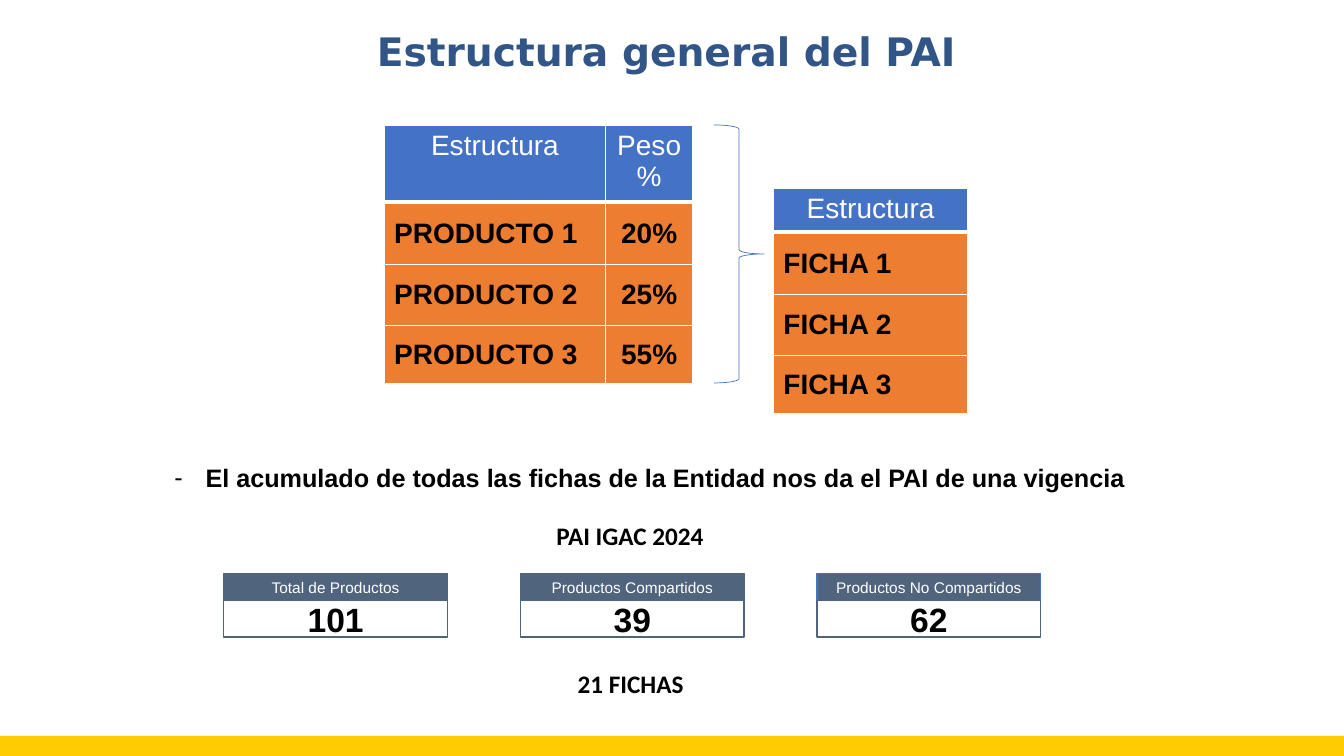
from lxml import etree
from pptx import Presentation
from pptx.dml.color import RGBColor
from pptx.enum.shapes import MSO_SHAPE
from pptx.enum.text import MSO_ANCHOR, PP_ALIGN
from pptx.oxml.ns import qn
from pptx.util import Inches, Pt

RECTANGLE, BRACE = MSO_SHAPE.RECTANGLE, MSO_SHAPE.RIGHT_BRACE
LEFT, CENTER = PP_ALIGN.LEFT, PP_ALIGN.CENTER
TOP, MIDDLE = MSO_ANCHOR.TOP, MSO_ANCHOR.MIDDLE
COLORS = {
    "yellow": "FFCC01", "title": "315587", "blue": "4472C4", "orange": "ED7D31",
    "slate": "51647E", "white": "FFFFFF", "black": "000000",
}
RGB = {name: RGBColor.from_string(value) for name, value in COLORS.items()}

presentation = Presentation()
presentation.slide_width, presentation.slide_height = Inches(13.33), Inches(7.5)
slide = presentation.slides.add_slide(presentation.slide_layouts[6])
shapes = slide.shapes


def share(left, top, width, height):
    across, down = presentation.slide_width / 100, presentation.slide_height / 100
    return int(left * across), int(top * down), int(width * across), int(height * down)


def write_text(frame, text, size, color="black", font="Arial", bold=True, align=LEFT):
    paragraph = frame.paragraphs[0]
    paragraph.alignment = align
    run = paragraph.add_run()
    run.text = text
    run.font.size, run.font.name, run.font.bold = Pt(size), font, bold
    run.font.color.rgb = RGB[color]


bar = shapes.add_shape(RECTANGLE, *share(0, 97.33, 100, 2.67))
bar.shadow.inherit = False
bar.fill.solid()
bar.fill.fore_color.rgb = RGB["yellow"]
bar.line.fill.background()

for text, box, size, color, font in [
    ("Estructura general del PAI", (27.31, 2.93, 45.46, 7.6), 28, "title", "DejaVu Sans"),
    ("PAI IGAC 2024", (40.66, 68.13, 12.6, 5.33), 18, "black", "Calibri"),
    ("21 FICHAS", (42.24, 87.73, 9.45, 5.33), 18, "black", "Calibri"),
]:
    label = shapes.add_textbox(*share(*box))
    label.text_frame.word_wrap = False
    write_text(label.text_frame, text, size, color, font)

summary = shapes.add_textbox(*share(12.23, 60.53, 78.54, 9.47))
summary.text_frame.word_wrap = True
properties = summary.text_frame.paragraphs[0]._p.get_or_add_pPr()
properties.set("marL", str(Inches(0.31)))
properties.set("indent", str(-Inches(0.31)))
etree.SubElement(properties, qn("a:buFont"), typeface="Arial")
etree.SubElement(properties, qn("a:buChar"), char="-")
write_text(summary.text_frame,
           "El acumulado de todas las fichas de la Entidad nos da el PAI de una vigencia", 18)

ROW_SHARES = [5.6, 8.27, 8, 7.73]
products = [("Estructura", "Peso %"), ("PRODUCTO 1", "20%"),
            ("PRODUCTO 2", "25%"), ("PRODUCTO 3", "55%")]
sheets = [("Estructura",), ("FICHA 1",), ("FICHA 2",), ("FICHA 3",)]
for rows, left, top, column_shares in [
    (products, 28.58, 16.53, [16.5, 6.45]),
    (sheets, 57.54, 24.93, [14.48]),
]:
    box = share(left, top, sum(column_shares), sum(ROW_SHARES))
    table = shapes.add_table(len(rows), len(column_shares), *box).table
    table.horz_banding = False
    for column, width in zip(table.columns, column_shares):
        column.width = int(presentation.slide_width * width / 100)
    for row, height in zip(table.rows, ROW_SHARES):
        row.height = int(presentation.slide_height * height / 100)
    for row_index, values in enumerate(rows):
        header = row_index == 0
        for column_index, value in enumerate(values):
            cell = table.cell(row_index, column_index)
            cell.vertical_anchor = TOP if header else MIDDLE
            cell_properties = cell._tc.get_or_add_tcPr()
            for side in ("L", "R", "T", "B"):
                weight = Pt(3) if header and side == "B" else Pt(1)
                border = etree.SubElement(cell_properties, qn(f"a:ln{side}"), w=str(weight))
                border_fill = etree.SubElement(border, qn("a:solidFill"))
                etree.SubElement(border_fill, qn("a:srgbClr"), val=COLORS["white"])
            cell.fill.solid()
            cell.fill.fore_color.rgb = RGB["blue" if header else "orange"]
            write_text(cell.text_frame, value, 20, "white" if header else "black",
                       bold=not header, align=CENTER if header or column_index else LEFT)

brace = shapes.add_shape(BRACE, *share(53.11, 16.53, 3.75, 34.13))
brace.shadow.inherit = False
brace.fill.background()
brace.line.color.rgb = RGB["blue"]
brace.line.width = Pt(0.5)

for index, (name, total, name_line) in enumerate([
    ("Total de Productos", "101", "slate"),
    ("Productos Compartidos", "39", "slate"),
    ("Productos No Compartidos", "62", "blue"),
]):
    for text, top, height, fill, line, size, color, bold in [
        (name, 75.87, 3.6, "slate", name_line, 11, "white", False),
        (total, 79.47, 4.8, "white", "slate", 24, "black", True),
    ]:
        card = shapes.add_shape(RECTANGLE, *share(16.65 + 22.07 * index, top, 16.65, height))
        card.shadow.inherit = False
        card.fill.solid()
        card.fill.fore_color.rgb = RGB[fill]
        card.line.color.rgb = RGB[line]
        card.line.width = Pt(1)
        frame = card.text_frame
        frame.margin_left = frame.margin_right = frame.margin_top = frame.margin_bottom = 0
        frame.vertical_anchor = MIDDLE
        write_text(frame, text, size, color, bold=bold, align=CENTER)

presentation.save("out.pptx")
